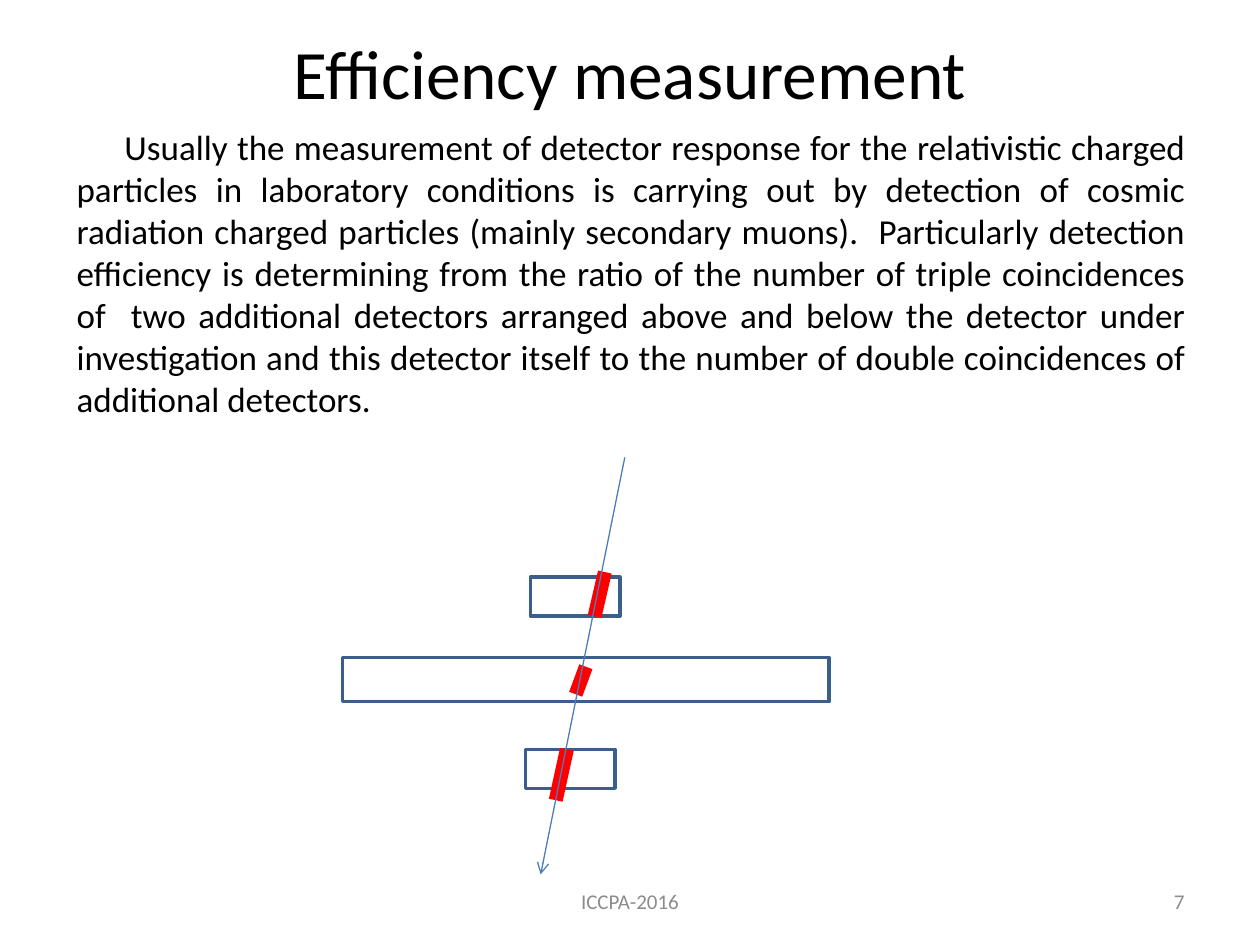
from lxml import etree
from pptx import Presentation
from pptx.dml.color import RGBColor
from pptx.enum.shapes import MSO_CONNECTOR, MSO_SHAPE
from pptx.enum.text import MSO_ANCHOR, PP_ALIGN
from pptx.oxml.ns import qn
from pptx.util import Inches, Pt

RECTANGLE = MSO_SHAPE.RECTANGLE
STRAIGHT = MSO_CONNECTOR.STRAIGHT
TOP, MIDDLE = MSO_ANCHOR.TOP, MSO_ANCHOR.MIDDLE
CENTER, RIGHT, JUSTIFY = PP_ALIGN.CENTER, PP_ALIGN.RIGHT, PP_ALIGN.JUSTIFY

WIDTH, HEIGHT = 10, 7.5
MARGIN = 0.05 * WIDTH
CONTENT_WIDTH = WIDTH - 2 * MARGIN
BLACK, GREY, WHITE = "000000", "8C8C8C", "FFFFFF"
DETECTOR_EDGE, HIT_RED, TRACK_BLUE = "3A5F8C", "FF0000", "4B7EBC"

EXPLANATION = (
    "Usually the measurement of detector response for the relativistic charged "
    "particles in laboratory conditions is carrying out by detection of cosmic "
    "radiation charged particles (mainly secondary muons).  Particularly detection "
    "efficiency is determining from the ratio of the number of triple coincidences "
    "of  two additional detectors arranged above and below the detector under "
    "investigation and this detector itself to the number of double coincidences "
    "of additional detectors."
)


def colour(value):
    """Turn a hex string into a colour."""
    return RGBColor.from_string(value)


def write(holder, text, size, ink, align, anchor):
    """Fill a text holder with one formatted paragraph and return it."""
    frame = holder.text_frame
    frame.word_wrap = True
    frame.vertical_anchor = anchor
    frame.text = text
    paragraph = frame.paragraphs[0]
    paragraph.alignment = align
    paragraph.font.name = "Calibri"
    paragraph.font.size = Pt(size)
    paragraph.font.color.rgb = colour(ink)
    return paragraph


def add_title(slide, left, top, width, height):
    """Place the slide title."""
    title = slide.shapes.title
    title.left, title.top = Inches(left), Inches(top)
    title.width, title.height = Inches(width), Inches(height)
    write(title, "Efficiency measurement", 39.6, BLACK, CENTER, MIDDLE)


def add_explanation(slide, left, top, width, height):
    """Place the justified paragraph with its first-line indent."""
    body = slide.shapes.add_textbox(*map(Inches, (left, top, width, height)))
    paragraph = write(body, EXPLANATION, 20, BLACK, JUSTIFY, TOP)
    properties = paragraph._p.get_or_add_pPr()
    properties.set("marL", "0")
    properties.set("indent", str(Inches(0.38)))


def add_footer(slide, left, top, width, height):
    """Place the conference name in the middle and the page number at the right."""
    entries = (("ICCPA-2016", 0.325, 0.35, CENTER), ("7", 0.74, 0.26, RIGHT))
    for text, offset, share, align in entries:
        entry = slide.shapes.add_textbox(
            Inches(left + offset * width), Inches(top),
            Inches(share * width), Inches(height))
        write(entry, text, 12, GREY, align, MIDDLE)


def add_detector(slide, left, top, width, height):
    """Draw one detector as an outlined bar."""
    detector = slide.shapes.add_shape(
        RECTANGLE, *map(Inches, (left, top, width, height)))
    detector.shadow.inherit = False
    detector.fill.solid()
    detector.fill.fore_color.rgb = colour(WHITE)
    detector.line.color.rgb = colour(DETECTOR_EDGE)
    detector.line.width = Pt(2)


def add_line(slide, start, end, ink, weight):
    """Draw a straight line without shadow and return it."""
    line = slide.shapes.add_connector(STRAIGHT, *map(Inches, (*start, *end)))
    line.line.color.rgb = colour(ink)
    line.line.width = Pt(weight)
    etree.SubElement(line._element.spPr, qn("a:effectLst"))
    return line


def add_setup(slide, left, top, width, height):
    """Draw three stacked detectors, the hits in them and the particle track."""
    def at(x, y):
        return left + x * width, top + y * height

    small, large = (0.71, 0.31), (width, 0.35)
    for corner, size in (((0, 0.48), large), ((0.386, 0.287), small),
                         ((0.376, 0.7), small)):
        add_detector(slide, *at(*corner), *size)

    for start, end in (((0.518, 0.381), (0.539, 0.275)),
                       ((0.479, 0.568), (0.5, 0.502)),
                       ((0.438, 0.822), (0.461, 0.7))):
        add_line(slide, at(*start), at(*end), HIT_RED, 8)

    track = add_line(slide, at(0.58, 0), at(0.407, 1), TRACK_BLUE, 0.75)
    etree.SubElement(track.line._get_or_add_ln(), qn("a:tailEnd"), type="arrow")


def main():
    """Build the slide and save it."""
    deck = Presentation()
    deck.slide_width, deck.slide_height = Inches(WIDTH), Inches(HEIGHT)
    slide = deck.slides.add_slide(deck.slide_layouts.get_by_name("Title Only"))
    add_title(slide, MARGIN, 0.04 * HEIGHT, CONTENT_WIDTH, 0.072 * HEIGHT)
    add_explanation(slide, MARGIN + 0.01, 0.95, CONTENT_WIDTH, 2.64)
    add_footer(slide, MARGIN, 6.95, CONTENT_WIDTH, 0.4)
    add_setup(slide, 2.72, 3.63, 3.86, 3.31)
    deck.save("out.pptx")


if __name__ == "__main__":
    main()
